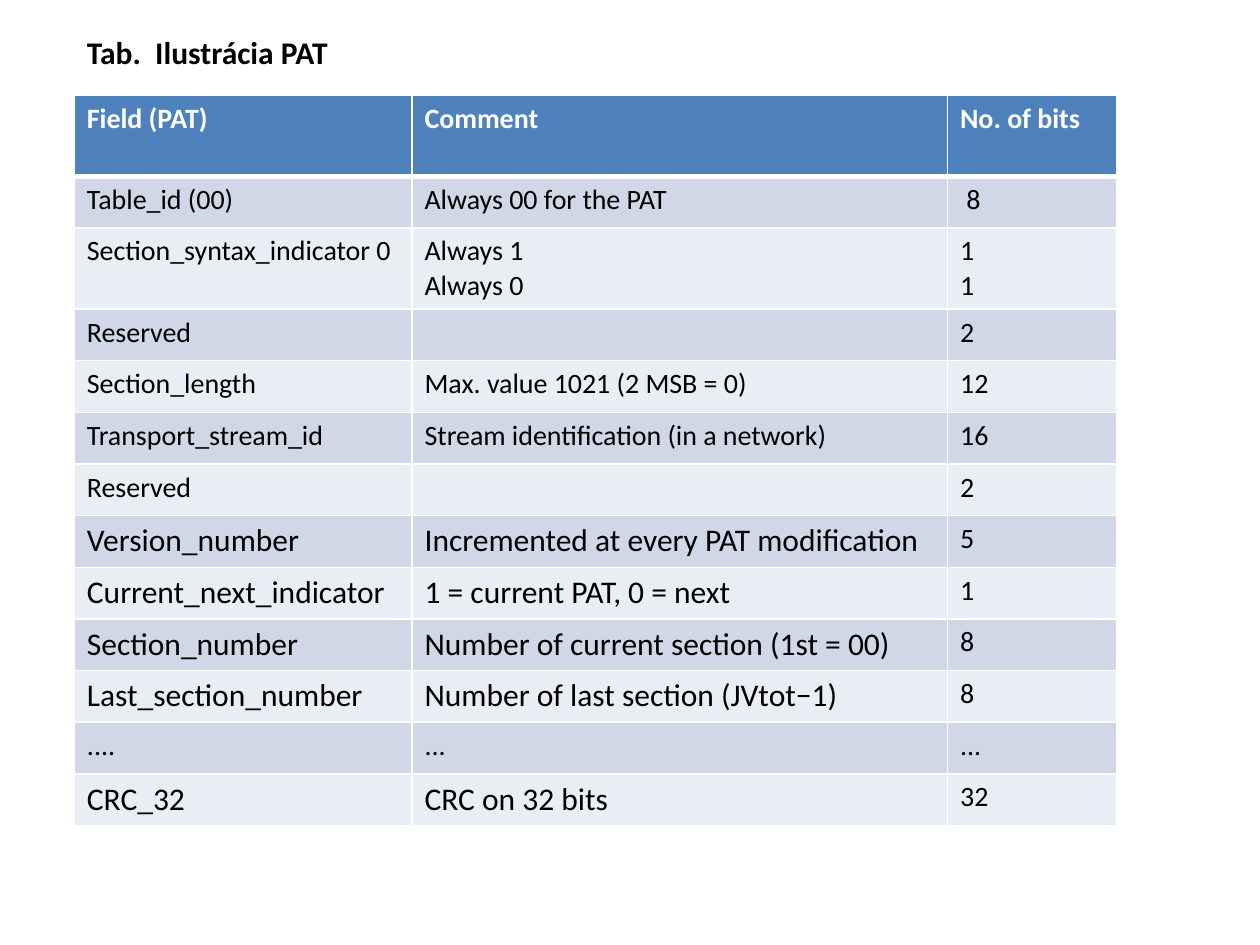
from pptx import Presentation
from pptx.dml.color import RGBColor
from pptx.enum.text import MSO_ANCHOR, MSO_AUTO_SIZE, PP_ALIGN
from pptx.oxml import parse_xml
from pptx.oxml.ns import nsdecls
from pptx.util import Inches, Pt

FONT = "Calibri"
WHITE, BLACK = "FFFFFF", "000000"
HEADER_FILL = "4F81BD"
BAND_FILLS = ("E9EDF4", "D0D8E8")
COLUMN_WIDTHS = (2.68, 4.25, 1.34)
ROW_HEIGHT, TALL_ROW_HEIGHT = 0.41, 0.64
TALL_ROWS = (0, 2)
LARGE_TEXT_ROWS = (7, 8, 9, 10, 12)

FIELDS = [
    ("Field (PAT)", "Comment", "No. of bits"),
    ("Table_id (00)", "Always 00 for the PAT", " 8"),
    ("Section_syntax_indicator 0", "Always 1\nAlways 0", "1\n1"),
    ("Reserved", "", "2"),
    ("Section_length", "Max. value 1021 (2 MSB = 0)", "12"),
    ("Transport_stream_id", "Stream identification (in a network)", "16"),
    ("Reserved", "", "2"),
    ("Version_number", "Incremented at every PAT modification", "5"),
    ("Current_next_indicator", "1 = current PAT, 0 = next", "1"),
    ("Section_number", "Number of current section (1st = 00)", "8"),
    ("Last_section_number", "Number of last section (JVtot−1)", "8"),
    ("....", "...", "..."),
    ("CRC_32", "CRC on 32 bits", "32"),
]


def rgb(color):
    return RGBColor.from_string(color)


def format_text(text_frame, size, color, bold):
    for paragraph in text_frame.paragraphs:
        paragraph.alignment = PP_ALIGN.LEFT
        for run in paragraph.runs:
            run.font.name = FONT
            run.font.size = Pt(size)
            run.font.bold = bold
            run.font.color.rgb = rgb(color)


def set_borders(cell, color, bottom_width):
    """Draw 1 pt borders, with the bottom one in its own width."""
    properties = cell._tc.get_or_add_tcPr()
    widths = {"lnL": 1, "lnR": 1, "lnT": 1, "lnB": bottom_width}
    for position, (side, width) in enumerate(widths.items()):
        properties.insert(position, parse_xml(
            f'<a:{side} {nsdecls("a")} w="{Pt(width)}"><a:solidFill>'
            f'<a:srgbClr val="{color}"/></a:solidFill></a:{side}>'))


def add_title(slide, left, top, width, height):
    title = slide.shapes.title
    title.left, title.top = Inches(left), Inches(top)
    title.width, title.height = Inches(width), Inches(height)
    text_frame = title.text_frame
    text_frame.text = "Tab.  Ilustrácia PAT"
    text_frame.word_wrap = True
    text_frame.auto_size = MSO_AUTO_SIZE.NONE
    text_frame.vertical_anchor = MSO_ANCHOR.TOP
    format_text(text_frame, 18, BLACK, True)


def add_field_table(slide, left, top, width, height):
    table = slide.shapes.add_table(
        len(FIELDS), len(COLUMN_WIDTHS),
        Inches(left), Inches(top), Inches(width), Inches(height)).table
    for column, column_width in zip(table.columns, COLUMN_WIDTHS):
        column.width = Inches(column_width)
    for row_index, texts in enumerate(FIELDS):
        is_header = row_index == 0
        is_tall = row_index in TALL_ROWS
        row = table.rows[row_index]
        row.height = Inches(TALL_ROW_HEIGHT if is_tall else ROW_HEIGHT)
        for column_index, text in enumerate(texts):
            cell = row.cells[column_index]
            cell.text_frame.text = text
            is_large = row_index in LARGE_TEXT_ROWS and column_index < 2
            format_text(cell.text_frame, 18 if is_large else 16,
                        WHITE if is_header else BLACK, is_header)
            cell.fill.solid()
            cell.fill.fore_color.rgb = rgb(
                HEADER_FILL if is_header else BAND_FILLS[row_index % 2])
            set_borders(cell, WHITE, 3 if is_header else 1)


def main():
    presentation = Presentation()
    presentation.slide_width, presentation.slide_height = Inches(10), Inches(7.5)
    slide = presentation.slides.add_slide(presentation.slide_layouts[5])
    add_field_table(slide, 0.59, 0.76, 8.27, 5.73)
    add_title(slide, 0.59, 0.21, 8.58, 0.71)
    presentation.save("out.pptx")


if __name__ == "__main__":
    main()
